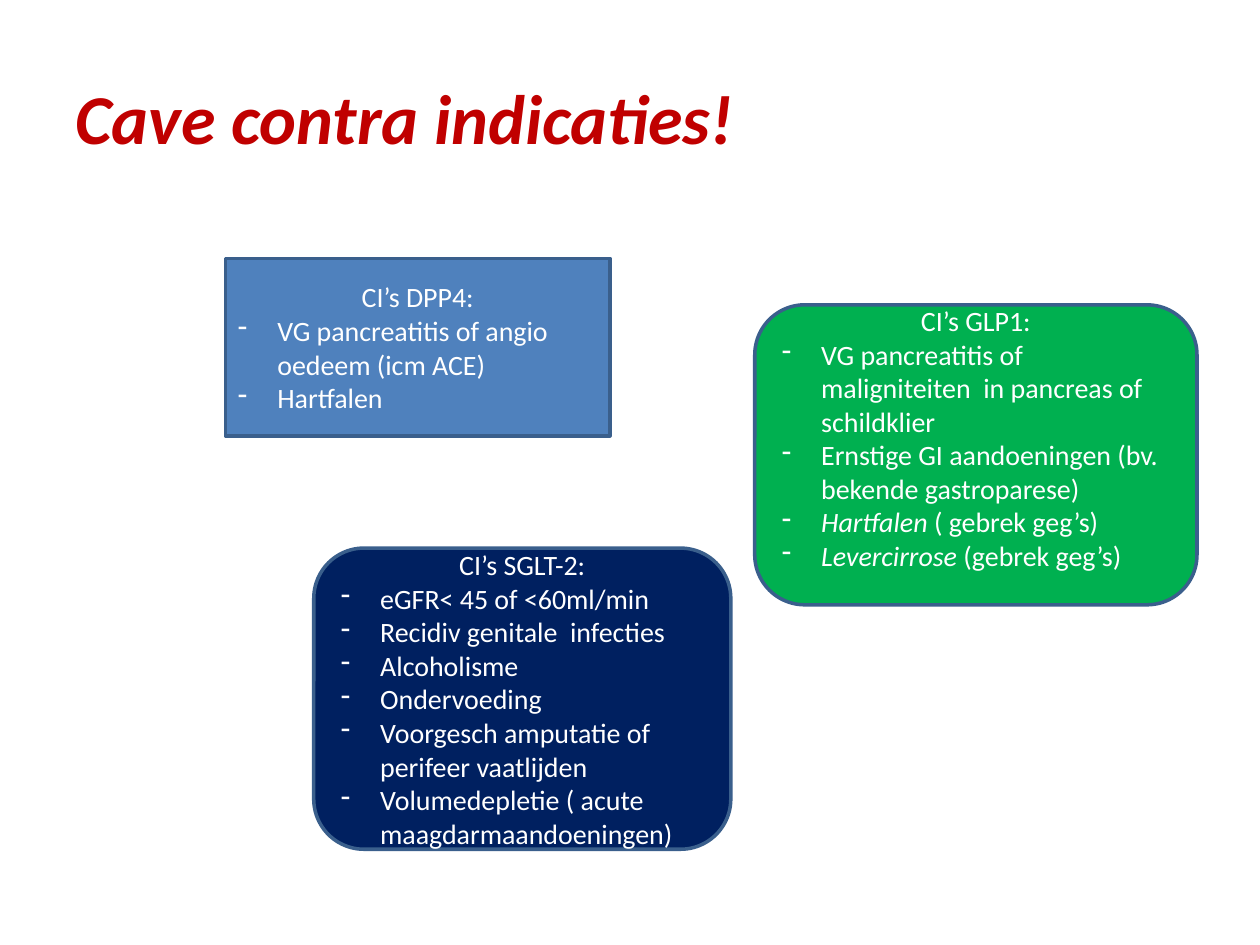
from dataclasses import dataclass

from lxml import etree
from pptx import Presentation
from pptx.dml.color import RGBColor
from pptx.enum.shapes import MSO_SHAPE
from pptx.enum.text import MSO_ANCHOR, PP_ALIGN
from pptx.oxml.ns import qn
from pptx.util import Pt

RECT = MSO_SHAPE.RECTANGLE
ROUNDED = MSO_SHAPE.ROUNDED_RECTANGLE
MIDDLE = MSO_ANCHOR.MIDDLE
LEFT, CENTER = PP_ALIGN.LEFT, PP_ALIGN.CENTER


@dataclass(frozen=True)
class Theme:
    font: str = "Calibri"
    title_size: float = 40
    body_size: float = 16
    title: str = "C00000"
    text: str = "FFFFFF"
    outline: str = "3A5F8C"
    dpp4: str = "4F81BD"
    glp1: str = "00B050"
    sglt2: str = "002060"


@dataclass(frozen=True)
class Run:
    text: str
    italic: bool = False


@dataclass(frozen=True)
class Card:
    box: tuple[float, float, float, float]
    fill: str
    heading: str
    items: list[list[Run]]
    geometry: MSO_SHAPE = ROUNDED
    bottom_inset: float = 3.6


THEME = Theme()
INDENT = 22.5
TITLE_BOX = (36, 21.6, 648, 90)

CARDS = [
    Card((431.3, 174.2, 252.7, 171.4), THEME.glp1, "CI’s GLP1:", [
        [Run("VG pancreatitis of maligniteiten  in pancreas of schildklier")],
        [Run("Ernstige GI aandoeningen (bv. bekende gastroparese)")],
        [Run("Hartfalen", True), Run(" ( gebrek geg’s)")],
        [Run("Levercirrose", True), Run(" (gebrek geg’s)")],
    ], bottom_inset=23),
    Card((128.9, 147.6, 219.6, 101.5), THEME.dpp4, "CI’s DPP4:", [
        [Run("VG pancreatitis of angio oedeem (icm ACE)")],
        [Run("Hartfalen")],
    ], geometry=RECT),
    Card((179.3, 313.2, 238.3, 172.1), THEME.sglt2, "CI’s SGLT-2:", [
        [Run("eGFR< 45 of <60ml/min")],
        [Run("Recidiv genitale  infecties")],
        [Run("Alcoholisme")],
        [Run("Ondervoeding")],
        [Run("Voorgesch amputatie of perifeer vaatlijden")],
        [Run("Volumedepletie ( acute maagdarmaandoeningen)")],
    ]),
]


def add_run(p, text: str, size: float, color: str, bold: bool = False, italic: bool = False) -> None:
    r = p.add_run()
    r.text = text
    r.font.name = THEME.font
    r.font.size = Pt(size)
    r.font.bold = bold
    r.font.italic = italic
    r.font.color.rgb = RGBColor.from_string(color)


def set_dash(p) -> None:
    pPr = p._p.get_or_add_pPr()
    pPr.set("marL", str(Pt(INDENT)))
    pPr.set("indent", str(-Pt(INDENT)))
    etree.SubElement(pPr, qn("a:buFontTx"))
    etree.SubElement(pPr, qn("a:buChar")).set("char", "-")


def add_title(s, text: str) -> None:
    sp = s.shapes.title
    sp.left, sp.top, sp.width, sp.height = map(Pt, TITLE_BOX)
    tf = sp.text_frame
    tf.vertical_anchor = MIDDLE
    p = tf.paragraphs[0]
    p.alignment = LEFT
    add_run(p, text, THEME.title_size, THEME.title, bold=True, italic=True)


def add_card(s, card: Card) -> None:
    sp = s.shapes.add_shape(card.geometry, *map(Pt, card.box))
    sp.shadow.inherit = False
    sp.fill.solid()
    sp.fill.fore_color.rgb = RGBColor.from_string(card.fill)
    sp.line.color.rgb = RGBColor.from_string(THEME.outline)
    sp.line.width = Pt(2)
    tf = sp.text_frame
    tf.word_wrap = True
    tf.vertical_anchor = MIDDLE
    tf.margin_bottom = Pt(card.bottom_inset)
    p = tf.paragraphs[0]
    p.alignment = CENTER
    add_run(p, card.heading, THEME.body_size, THEME.text)
    for item in card.items:
        p = tf.add_paragraph()
        p.alignment = LEFT
        set_dash(p)
        for run in item:
            add_run(p, run.text, THEME.body_size, THEME.text, italic=run.italic)


def main() -> None:
    prs = Presentation()
    prs.slide_width, prs.slide_height = Pt(720), Pt(540)
    s = prs.slides.add_slide(prs.slide_layouts[5])
    add_title(s, "Cave contra indicaties!")
    for card in CARDS:
        add_card(s, card)
    prs.save("out.pptx")


if __name__ == "__main__":
    main()
